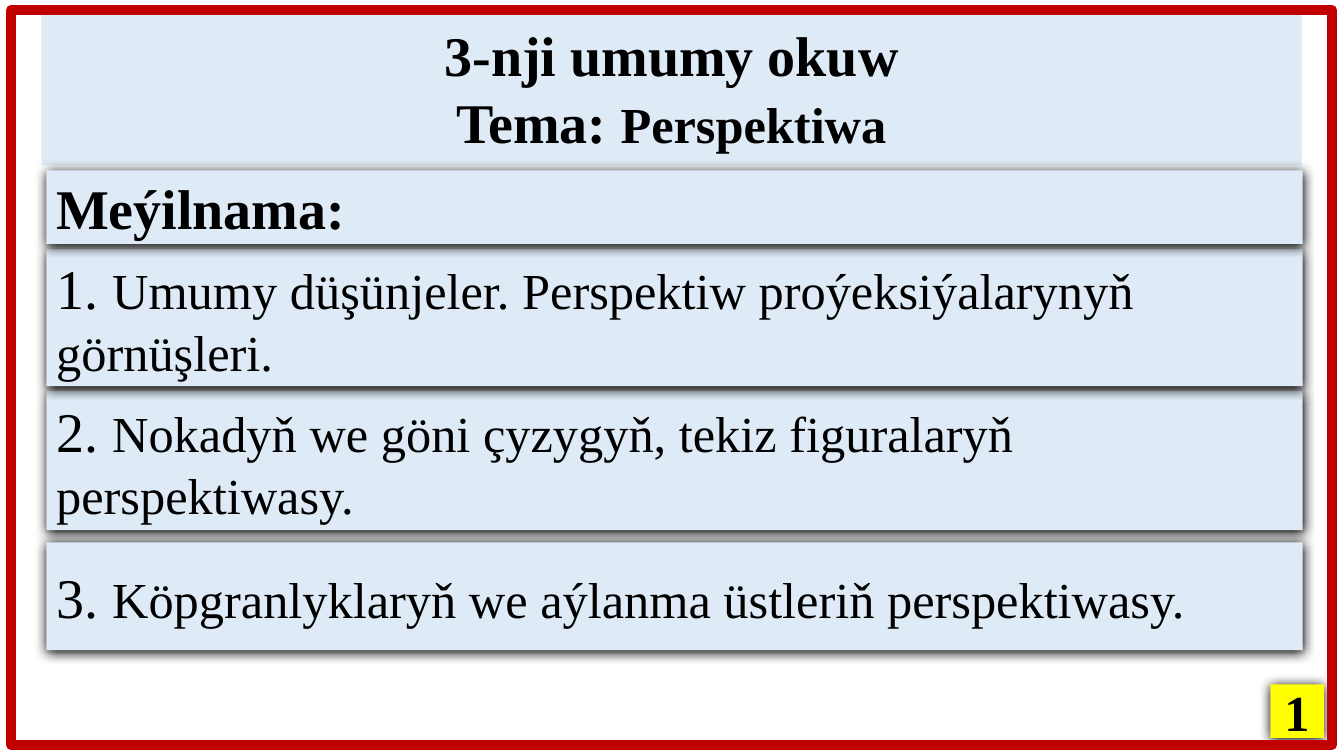
from lxml import etree
from pptx import Presentation
from pptx.dml.color import RGBColor
from pptx.enum import shapes, text
from pptx.oxml.ns import qn
from pptx.util import Inches, Pt

PALE_BLUE = "DEEBF7"
KIND = shapes.MSO_SHAPE
ALIGN = text.PP_ALIGN


def add_panel(kind, place, fill, paragraphs, align, shadow=True):
    """Add a borderless filled shape; each paragraph is a list of (words, size, bold)."""
    panel = page.shapes.add_shape(kind, *map(Inches, place))
    panel.fill.solid()
    panel.fill.fore_color.rgb = RGBColor.from_string(fill)
    panel.line.fill.background()
    panel.shadow.inherit = False
    if len(panel.adjustments):
        panel.adjustments[0] = 0
    if shadow:
        effects = panel._element.spPr.find(qn("a:effectLst"))
        outer = etree.SubElement(effects, qn("a:outerShdw"), blurRad=str(Pt(8.5)),
                                 dist=str(Pt(1)), dir="5400000", algn="t", rotWithShape="0")
        etree.SubElement(outer, qn("a:srgbClr"), val="000000")

    frame = panel.text_frame
    frame.word_wrap = True
    frame.vertical_anchor = text.MSO_ANCHOR.MIDDLE
    for index, spans in enumerate(paragraphs):
        para = frame.paragraphs[0] if index == 0 else frame.add_paragraph()
        para.alignment = align
        for words, size, bold in spans:
            span = para.add_run()
            span.text = words
            for name, value in {"name": "Times New Roman", "size": Pt(size), "bold": bold}.items():
                setattr(span.font, name, value)
            span.font.color.rgb = RGBColor.from_string("000000")
    return panel


deck = Presentation()
deck.slide_width, deck.slide_height = Inches(13.33), Inches(7.5)
page = deck.slides.add_slide(deck.slide_layouts[6])

add_panel(KIND.RECTANGLE, (12.6, 6.79, 0.53, 0.53), "FFFF00", [[("1", 36, True)]], ALIGN.CENTER)

title = [[("3-nji umumy okuw", 40, True)],
         [("Tema: ", 40, True), ("Perspektiwa", 36, True)]]
add_panel(KIND.ROUNDED_RECTANGLE, (0.41, 0.1, 12.5, 1.54), PALE_BLUE, title,
          ALIGN.CENTER, shadow=False)

plan = [
    (3.88, 1.38, [("2. ", 40, False),
                  ("Nokadyň we göni çyzygyň, tekiz figuralaryň perspektiwasy.", 36, False)]),
    (2.47, 1.36, [("1. ", 40, False),
                  ("Umumy düşünjeler. Perspektiw proýeksiýalarynyň görnüşleri.", 36, False)]),
    (1.69, 0.73, [("Meýilnama:", 40, True)]),
    (5.38, 1.07, [("3. ", 40, False),
                  ("Köpgranlyklaryň we aýlanma üstleriň perspektiwasy.", 36, False)]),
]
for top, height, spans in plan:
    bar = add_panel(KIND.PENTAGON, (0.46, top, 12.46, height), PALE_BLUE, [spans], ALIGN.LEFT)
    bar._element.spPr.find(qn("a:xfrm")).set("flipH", "1")

border = page.shapes.add_shape(KIND.RECTANGLE, *map(Inches, (0.11, 0.1, 13.1, 7.29)))
border.fill.background()
border.line.color.rgb = RGBColor.from_string("C00000")
border.line.width = Pt(7)
border.shadow.inherit = False

deck.save("out.pptx")
